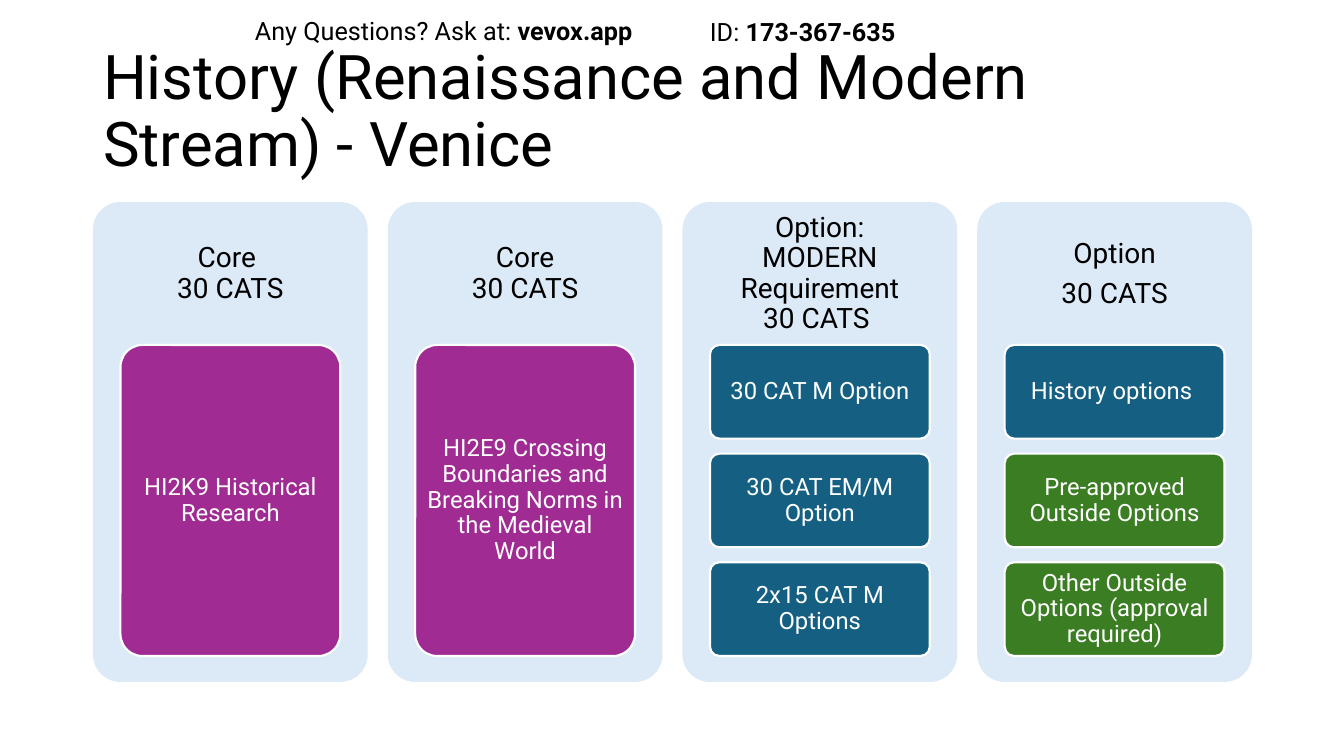
import pptx
import pptx.dml.color
import pptx.enum.shapes
import pptx.enum.text
import pptx.util

TITLE = "History (Renaissance and Modern Stream) - Venice"
# Each notice: box in px, plain lead, bold ending
NOTICES = [
    ((700, 11, 266, 42), "ID: ", "173-367-635"),
    ((245, 10, 399, 40), "Any Questions? Ask at: ", "vevox.app"),
]
# Each column: heading paragraphs, then cards as (kind, text); \v is a line break
COLUMNS = [
    (["Core \v30 CATS"], [("core", "HI2K9 Historical Research")]),
    (["Core\v30 CATS"],
     [("core", "HI2E9 Crossing Boundaries and Breaking Norms in the Medieval World")]),
    (["Option:\vMODERN Requirement\v30 CATS "],
     [("history", "30 CAT M Option"),
      ("history", "30 CAT EM/M Option"),
      ("history", "2x15 CAT M Options")]),
    (["Option", "30 CATS"],
     [("history", "History options "),
      ("outside", "Pre-approved Outside Options"),
      ("outside", "Other Outside Options (approval required)")]),
]
COLORS = {"panel": "DCEAF7", "core": "A02B93", "history": "156082",
          "outside": "3B7D23", "white": "FFFFFF", "black": "000000"}
FONT = "Roboto"
EMU_PER_PX = 914400 / 100.8

SLIDE_W, SLIDE_H = 1344, 756
TITLE_BOX = (93, 40, 1159, 146)
LEFT, TOP, TOTAL_W, PANEL_H = 93, 202, 1159, 480
PANEL_GAP, HEADING_H = 20, 144
CARDS_TOP, CARDS_H, CARD_GAP = 345, 311, 15
ROUNDING = 0.1

PP_ALIGN = pptx.enum.text.PP_ALIGN


def emu(*lengths):
    return [pptx.util.Emu(round(px * EMU_PER_PX)) for px in lengths]


def rgb(name):
    return pptx.dml.color.RGBColor.from_string(COLORS[name])


def set_format(target, **values):
    for name, value in values.items():
        setattr(target, name, value)


def style_font(font, size, color, bold=False):
    set_format(font, name=FONT, size=pptx.util.Pt(size), bold=bold)
    font.color.rgb = rgb(color)


def write(frame, paragraphs, size, color, align, margins=None, space_after=0):
    """Fill a frame with middle-anchored paragraphs at 90% line spacing."""
    set_format(frame, word_wrap=True, auto_size=pptx.enum.text.MSO_AUTO_SIZE.NONE,
               vertical_anchor=pptx.enum.text.MSO_ANCHOR.MIDDLE)
    if margins:
        side, end = emu(*margins)
        set_format(frame, margin_left=side, margin_right=side,
                   margin_top=end, margin_bottom=end)
    frame.text = "\n".join(paragraphs)
    for paragraph in frame.paragraphs:
        set_format(paragraph, alignment=align, line_spacing=0.9,
                   space_before=pptx.util.Pt(0),
                   space_after=pptx.util.Pt(space_after))
        for run in paragraph.runs:
            style_font(run.font, size, color)


def add_rounded(slide, box, color):
    shape = slide.shapes.add_shape(
        pptx.enum.shapes.MSO_SHAPE.ROUNDED_RECTANGLE, *emu(*box))
    shape.adjustments[0] = ROUNDING
    shape.shadow.inherit = False
    shape.fill.solid()
    shape.fill.fore_color.rgb = rgb(color)
    shape.line.fill.background()
    return shape


def add_column(slide, left, width, heading, cards):
    add_rounded(slide, (left, TOP, width, PANEL_H), "panel")
    heading_box = slide.shapes.add_textbox(*emu(left, TOP, width, HEADING_H))
    write(heading_box.text_frame, heading, 20, "black", PP_ALIGN.CENTER, (8, 8), 7)

    card_h = (CARDS_H - CARD_GAP * (len(cards) - 1)) / len(cards)
    for row, (kind, text) in enumerate(cards):
        card_top = CARDS_TOP + row * (card_h + CARD_GAP)
        card = add_rounded(
            slide, (left + width * 0.1, card_top, width * 0.8, card_h), kind)
        card.line.color.rgb = rgb("white")
        card.line.width = pptx.util.Pt(1.5)
        write(card.text_frame, [text], 17, "white", PP_ALIGN.CENTER, (5, 4), 6)


def add_notice(slide, box, lead, ending):
    frame = slide.shapes.add_textbox(*emu(*box)).text_frame
    frame.word_wrap = True
    for text, bold in ((lead, False), (ending, True)):
        run = frame.paragraphs[0].add_run()
        run.text = text
        style_font(run.font, 18, "black", bold)


def main():
    deck = pptx.Presentation()
    deck.slide_width, deck.slide_height = emu(SLIDE_W, SLIDE_H)
    slide = deck.slides.add_slide(deck.slide_layouts[5])

    title = slide.shapes.title
    set_format(title, **dict(zip(("left", "top", "width", "height"), emu(*TITLE_BOX))))
    write(title.text_frame, [TITLE], 44, "black", PP_ALIGN.LEFT)

    panel_w = (TOTAL_W - PANEL_GAP * (len(COLUMNS) - 1)) / len(COLUMNS)
    for index, (heading, cards) in enumerate(COLUMNS):
        add_column(slide, LEFT + index * (panel_w + PANEL_GAP), panel_w, heading, cards)

    for notice in NOTICES:
        add_notice(slide, *notice)
    deck.save("out.pptx")


if __name__ == "__main__":
    main()
